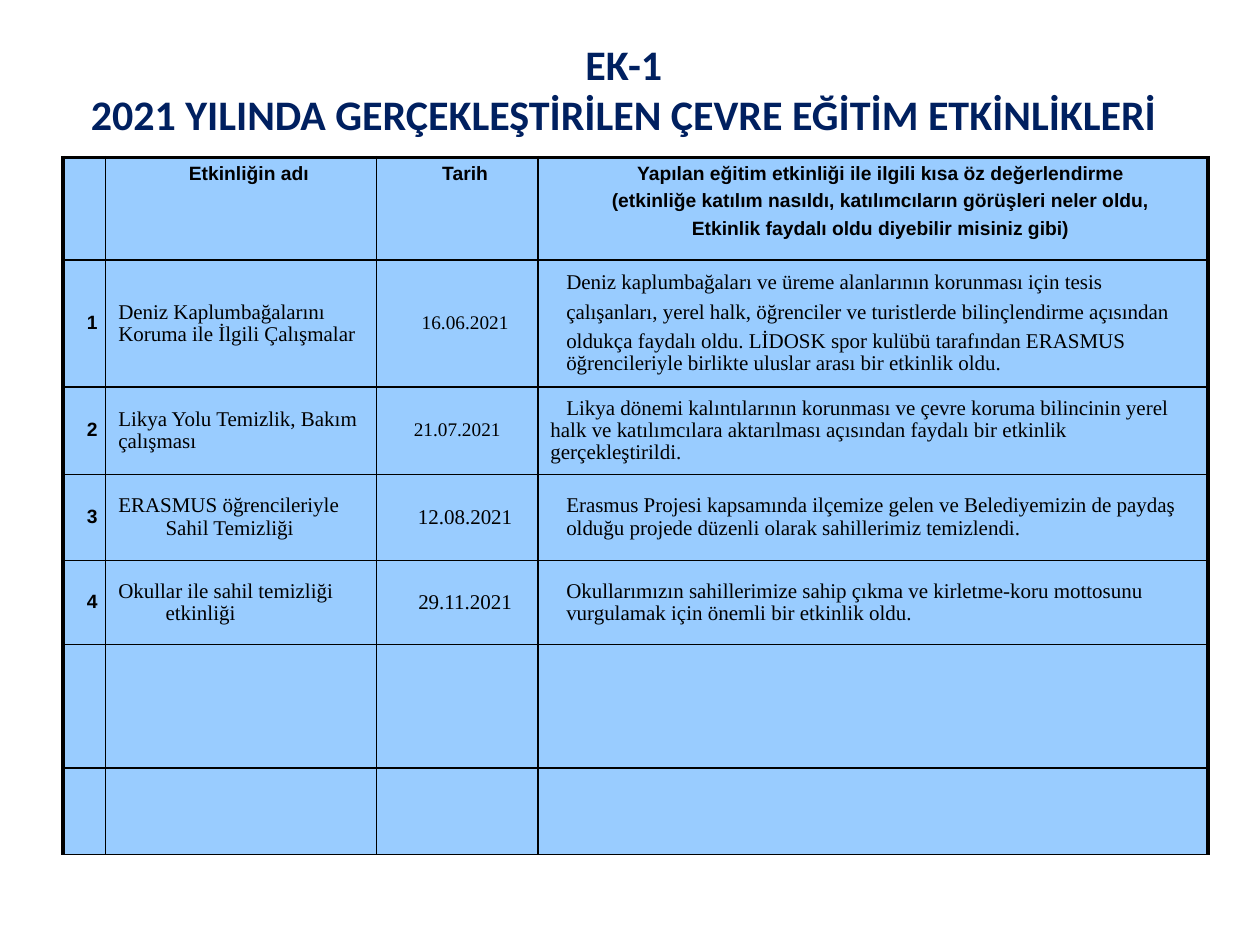
"""Build the slide listing the environmental education events of 2021."""
from pptx import Presentation
from pptx.dml.color import RGBColor
from pptx.enum.text import MSO_ANCHOR as Anchor, MSO_AUTO_SIZE as AutoSize, PP_ALIGN as Align
from pptx.oxml.ns import qn
from pptx.util import Pt
from lxml.etree import SubElement

COLORS = {"title": "002060", "cell": "99CCFF", "ink": "000000"}
TITLE = {"name": "Calibri", "size": Pt(24), "bold": True}
LABEL = {"name": "Arial", "size": Pt(11), "bold": True}
BODY = {"name": "Times New Roman", "size": Pt(12), "bold": False}
SMALL = {**BODY, "size": Pt(11)}

CENTERED = {"align": Align.CENTER, "left": 9, "first": 0, "before": 4}
MIDDLE = {"align": Align.CENTER, "left": 0, "first": 0, "before": 0}
HANGING = {"align": Align.LEFT, "left": 27, "first": -27, "before": 0}
INDENTED = {"align": Align.LEFT, "left": 9, "first": 0, "before": 4}
FLUSH = {"align": Align.LEFT, "left": 0, "first": 0, "before": 0}
OPENING = {**FLUSH, "first": 9}

COLUMN_WIDTHS = [24.4, 154.8, 92.2, 382.9]
ROW_HEIGHTS = [58.6, 72.6, 50, 49, 48.3, 70.5, 49.5]
HEADER = [
    [],
    ["Etkinliğin adı"],
    ["Tarih"],
    ["Yapılan eğitim etkinliği ile ilgili kısa öz değerlendirme",
     "(etkinliğe katılım nasıldı, katılımcıların görüşleri neler oldu,",
     "Etkinlik faydalı oldu diyebilir misiniz gibi)"],
]
EVENTS = [
    [(["1"], CENTERED, LABEL),
     (["Deniz Kaplumbağalarını", "Koruma ile İlgili Çalışmalar"], HANGING, BODY),
     (["16.06.2021"], CENTERED, SMALL),
     (["Deniz kaplumbağaları ve üreme alanlarının korunması için tesis",
       "çalışanları, yerel halk, öğrenciler ve turistlerde bilinçlendirme açısından",
       "oldukça faydalı oldu. LİDOSK spor kulübü tarafından ERASMUS öğrencileriyle "
       "birlikte uluslar arası bir etkinlik oldu."], INDENTED, BODY)],
    [(["2"], CENTERED, LABEL),
     (["Likya Yolu Temizlik, Bakım çalışması"], FLUSH, BODY),
     (["21.07.2021"], MIDDLE, SMALL),
     (["Likya dönemi kalıntılarının korunması ve çevre koruma bilincinin yerel halk ve "
       "katılımcılara aktarılması açısından faydalı bir etkinlik gerçekleştirildi."],
      OPENING, BODY)],
    [(["3"], CENTERED, LABEL),
     (["ERASMUS öğrencileriyle Sahil Temizliği"], HANGING, BODY),
     (["12.08.2021"], CENTERED, BODY),
     (["Erasmus Projesi kapsamında ilçemize gelen ve Belediyemizin de paydaş olduğu "
       "projede düzenli olarak sahillerimiz temizlendi."], INDENTED, BODY)],
    [(["4"], CENTERED, LABEL),
     (["Okullar ile sahil temizliği etkinliği"], HANGING, BODY),
     (["29.11.2021"], CENTERED, BODY),
     (["Okullarımızın sahillerimize sahip çıkma ve kirletme-koru mottosunu vurgulamak "
       "için önemli bir etkinlik oldu."], INDENTED, BODY)],
]


def write(frame, lines, layout, font, color):
    """Fill a text frame with one formatted paragraph per line."""
    for index, line in enumerate(lines):
        para = frame.add_paragraph() if index else frame.paragraphs[0]
        para.alignment = layout["align"]
        para.space_before = Pt(layout["before"] if index else 0)
        para.line_spacing = 1.0 if font is TITLE else 0.96
        properties = para._p.get_or_add_pPr()
        properties.set("marL", str(Pt(layout["left"])))
        properties.set("indent", str(Pt(layout["first"])))
        span = para.add_run()
        span.text = line
        for name, value in font.items():
            setattr(span.font, name, value)
        span.font.color.rgb = RGBColor.from_string(COLORS[color])


def add_border(cell, side, width):
    """Draw one solid side of a table cell."""
    line = SubElement(cell._tc.get_or_add_tcPr(), qn(f"a:ln{side}"), w=str(Pt(width)))
    fill = SubElement(line, qn("a:solidFill"))
    SubElement(fill, qn("a:srgbClr"), val=COLORS["ink"])


deck = Presentation()
deck.slide_width, deck.slide_height = Pt(720), Pt(540)
page = deck.slides.add_slide(deck.slide_layouts[5])

title = page.shapes.title
title.left, title.top, title.width, title.height = Pt(41.8), Pt(18), Pt(629.3), Pt(65.5)
title.text_frame.word_wrap = False
title.text_frame.auto_size = AutoSize.NONE
write(title.text_frame, ["EK-1", "2021 YILINDA GERÇEKLEŞTİRİLEN ÇEVRE EĞİTİM ETKİNLİKLERİ"],
      MIDDLE, TITLE, "title")

table = page.shapes.add_table(len(ROW_HEIGHTS), len(COLUMN_WIDTHS), Pt(36), Pt(90),
                              Pt(sum(COLUMN_WIDTHS)), Pt(sum(ROW_HEIGHTS))).table
table.first_row = table.horz_banding = False
for column, width in zip(table.columns, COLUMN_WIDTHS):
    column.width = Pt(width)
for row, height in zip(table.rows, ROW_HEIGHTS):
    row.height = Pt(height)

last_column = len(COLUMN_WIDTHS) - 1
for row_index, row in enumerate(table.rows):
    for column_index, cell in enumerate(row.cells):
        outer_sides = {"L": column_index == 0, "R": column_index == last_column,
                       "T": row_index == 0, "B": False}
        for side, outer in outer_sides.items():
            add_border(cell, side, 2.25 if outer else 1)
        cell.fill.solid()
        cell.fill.fore_color.rgb = RGBColor.from_string(COLORS["cell"])
        cell.vertical_anchor = Anchor.MIDDLE if row_index else Anchor.TOP

rows = [[(lines, CENTERED, LABEL) for lines in HEADER]] + EVENTS
for row, entries in zip(table.rows, rows):
    for cell, (lines, layout, font) in zip(row.cells, entries):
        write(cell.text_frame, lines, layout, font, "ink")

deck.save("out.pptx")
